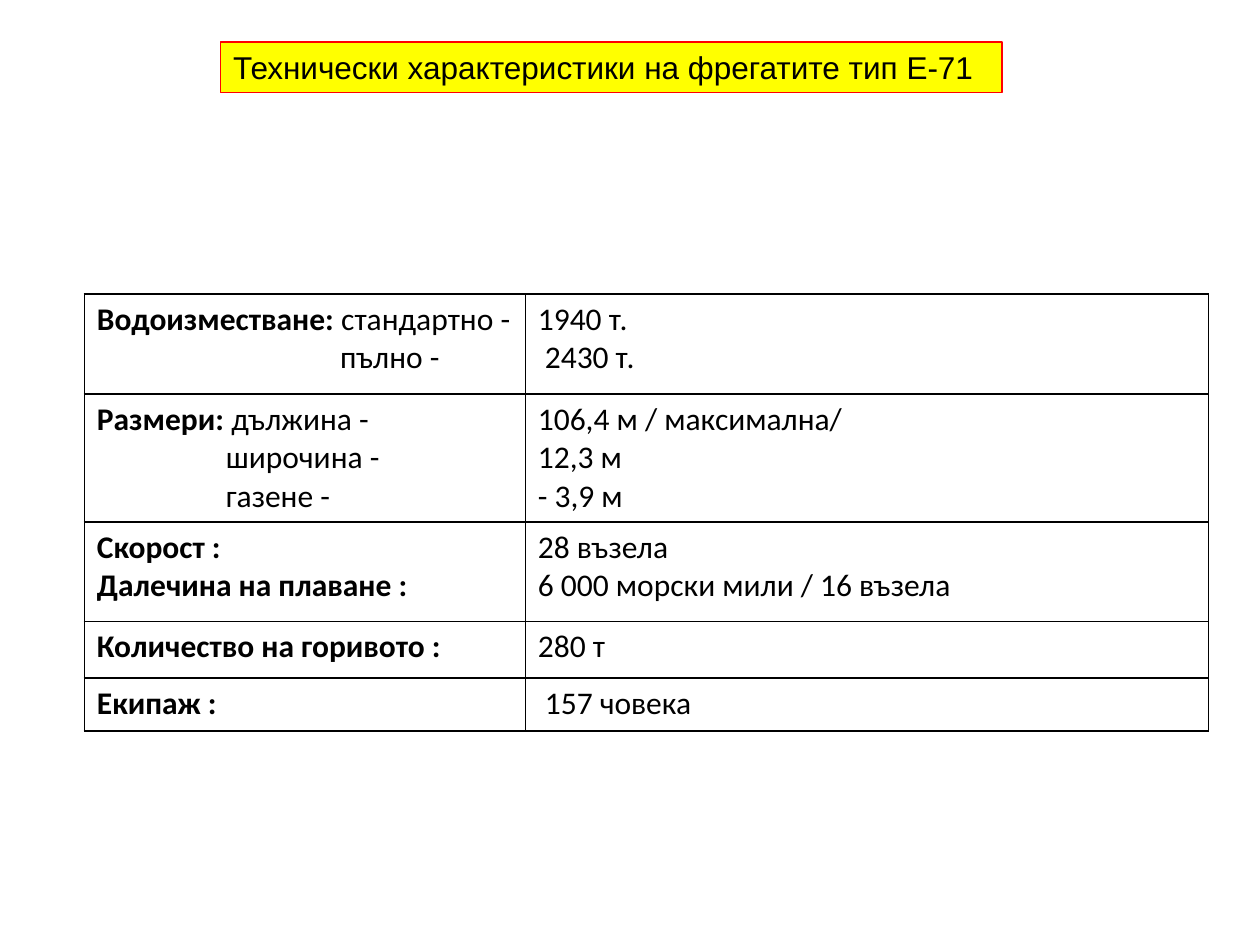
from dataclasses import dataclass

from lxml import etree
from pptx import Presentation
from pptx.dml.color import RGBColor
from pptx.enum.shapes import MSO_SHAPE
from pptx.enum.text import MSO_ANCHOR, MSO_AUTO_SIZE, PP_ALIGN
from pptx.oxml.ns import qn
from pptx.util import Cm, Pt

RECTANGLE = MSO_SHAPE.RECTANGLE
LEFT = PP_ALIGN.LEFT
TOP = MSO_ANCHOR.TOP
FIT_SHAPE = MSO_AUTO_SIZE.SHAPE_TO_FIT_TEXT


@dataclass(frozen=True)
class Theme:
    ink: str = "000000"
    title_fill: str = "FFFF00"
    title_line: str = "FF0000"
    title_font: str = "Arial"
    table_font: str = "Calibri"
    text_size: int = 18
    title_line_width: float = 0.75
    border_width: float = 1


class SlideBuilder:
    def __init__(self, slide, theme):
        self.slide = slide
        self.theme = theme

    def add_run(self, paragraph, text, font_name, bold=False):
        run = paragraph.add_run()
        run.text = text
        run.font.name = font_name
        run.font.size = Pt(self.theme.text_size)
        run.font.bold = bold
        run.font.color.rgb = RGBColor.from_string(self.theme.ink)

    def title(self, text, left, top, width, height):
        box = self.slide.shapes.add_shape(
            RECTANGLE, Cm(left), Cm(top), Cm(width), Cm(height))
        box.shadow.inherit = False
        box.fill.solid()
        box.fill.fore_color.rgb = RGBColor.from_string(self.theme.title_fill)
        box.line.color.rgb = RGBColor.from_string(self.theme.title_line)
        box.line.width = Pt(self.theme.title_line_width)
        frame = box.text_frame
        frame.word_wrap = True
        frame.auto_size = FIT_SHAPE
        frame.vertical_anchor = TOP
        frame.paragraphs[0].alignment = LEFT
        self.add_run(frame.paragraphs[0], text, self.theme.title_font)

    def borders(self, cell):
        properties = cell._tc.get_or_add_tcPr()
        for side in ("a:lnL", "a:lnR", "a:lnT", "a:lnB"):
            border = etree.SubElement(
                properties, qn(side), w=str(Pt(self.theme.border_width)))
            fill = etree.SubElement(border, qn("a:solidFill"))
            etree.SubElement(fill, qn("a:srgbClr"), val=self.theme.ink)

    def fill_cell(self, cell, lines):
        self.borders(cell)
        cell.fill.background()
        frame = cell.text_frame
        for number, (indent, runs) in enumerate(lines):
            paragraph = frame.add_paragraph() if number else frame.paragraphs[0]
            if indent:
                properties = paragraph._p.get_or_add_pPr()
                properties.set("marL", str(Cm(indent)))
                properties.set("indent", "0")
            for text, bold in runs:
                self.add_run(paragraph, text, self.theme.table_font, bold)

    def table(self, rows, left, top, widths, heights):
        table = self.slide.shapes.add_table(
            len(rows), len(widths), Cm(left), Cm(top),
            Cm(sum(widths)), Cm(sum(heights))).table
        table.first_row = False
        table.horz_banding = False
        for column, width in zip(table.columns, widths):
            column.width = Cm(width)
        for row, height, contents in zip(table.rows, heights, rows):
            row.height = Cm(height)
            for cell, lines in zip(row.cells, contents):
                self.fill_cell(cell, lines)


def label(text, detail=""):
    runs = [(text, True)]
    if detail:
        runs.append((detail, False))
    return 0, runs


def value(text, indent=0):
    return indent, [(text, False)]


# Indents in cm that line the details up under the first one
DISPLACEMENT_INDENT = 4.9
SIZE_INDENT = 2.6
SPACE_INDENT = 0.14

CHARACTERISTICS = [
    ([label("Водоизместване: ", "стандартно -"),
      value("пълно -", DISPLACEMENT_INDENT)],
     [value("1940 т."), value("2430 т.", SPACE_INDENT)]),
    ([label("Размери: ", "дължина -"),
      value("широчина -", SIZE_INDENT),
      value("газене -", SIZE_INDENT)],
     [value("106,4 м / максимална/"), value("12,3 м"), value("- 3,9 м")]),
    ([label("Скорост :"), label("Далечина на плаване :")],
     [value("28 възела"), value("6 000 морски мили / 16 възела")]),
    ([label("Количество на горивото :")], [value("280 т")]),
    ([label("Екипаж :")], [value("157 човека", SPACE_INDENT)]),
]


def main():
    presentation = Presentation()
    presentation.slide_width = Cm(25.4)
    presentation.slide_height = Cm(19.05)
    slide = presentation.slides.add_slide(presentation.slide_layouts[6])
    builder = SlideBuilder(slide, Theme())

    # Characteristics table
    builder.table(CHARACTERISTICS, left=1.7, top=5.93, widths=[8.89, 13.77],
                  heights=[2.01, 2.01, 2.01, 1.14, 1.07])

    # Title
    builder.title("Технически характеристики на фрегатите тип Е-71",
                  left=4.45, top=0.85, width=15.75, height=1.02)

    presentation.save("out.pptx")


if __name__ == "__main__":
    main()
